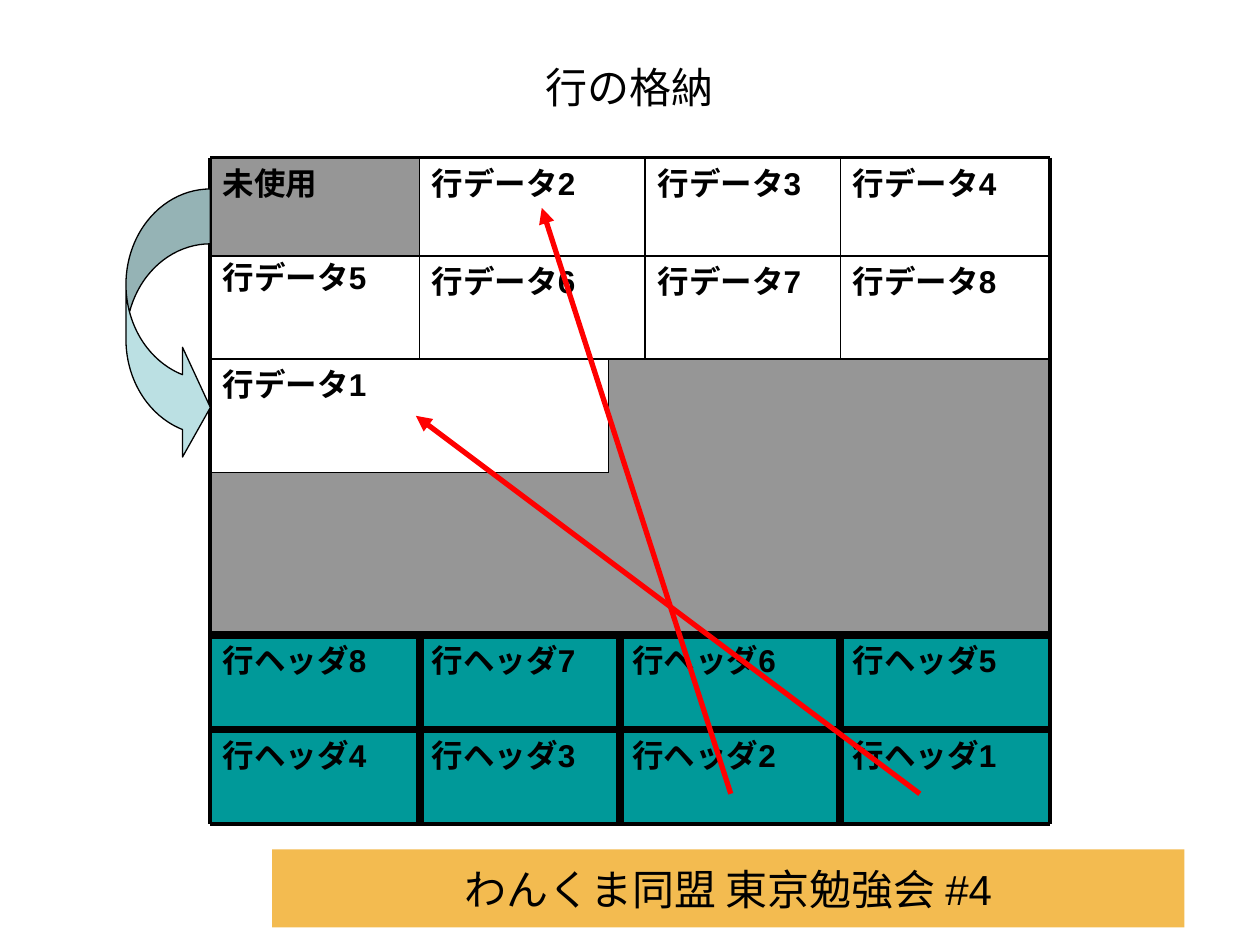
from dataclasses import dataclass

from lxml import etree
from pptx import Presentation
from pptx import util as u
from pptx.dml.color import RGBColor
from pptx.enum import shapes, text
from pptx.oxml.ns import qn

WIDE, HIGH = 10, 7.5
FONT = "Arial"
HUES = {
    "ink": "000000",
    "paper": "FFFFFF",
    "free": "969696",
    "head": "009999",
    "band": "F3BB50",
    "bend": "BBE0E3",
    "link": "FF0000",
}
COLS = {"A": 1.67, "B": 3.33, "C": 4.83, "D": 4.92, "E": 5.12, "F": 6.67, "G": 8.33}
ROWS = [1.25, 2.03, 2.85, 3.75, 5.04, 5.79, 6.54]
DATA = "ABEFG"
HEADS = "ABDFG"
THIN, EDGE, THICK = 1, 2.25, 4.5


@dataclass
class Cell:
    label: str
    left: str
    right: str
    top: int
    end: int
    fill: str | None = None
    lift: float = 0


@dataclass
class Rule:
    start: tuple[str, int]
    stop: tuple[str, int]
    weight: float


@dataclass
class Link:
    start: tuple[float, float]
    stop: tuple[float, float]


def tint(name: str) -> RGBColor:
    return RGBColor.from_string(HUES[name])


def write(frame, label: str, size: int, align, anchor, bold: bool = False) -> None:
    frame.text = label
    frame.word_wrap = True
    frame.vertical_anchor = anchor
    line = frame.paragraphs[0]
    line.alignment = align
    for run in line.runs:
        run.font.name = FONT
        run.font.size = u.Pt(size)
        run.font.bold = bold
        run.font.color.rgb = tint("ink")


def block(slide, kind, box: tuple, fill: str, line: str | None = None):
    shape = slide.shapes.add_shape(kind, *map(u.Inches, box))
    shape.shadow.inherit = False
    shape.fill.solid()
    shape.fill.fore_color.rgb = tint(fill)
    if line:
        shape.line.color.rgb = tint(line)
        shape.line.width = u.Pt(0.75)
    else:
        shape.line.fill.background()
    return shape


def draw_cell(slide, cell: Cell) -> None:
    left, top = COLS[cell.left], ROWS[cell.top] - cell.lift
    box = (left, top, COLS[cell.right] - left, ROWS[cell.end] - ROWS[cell.top])
    if cell.fill:
        shape = block(slide, shapes.MSO_SHAPE.RECTANGLE, box, cell.fill)
    else:
        shape = slide.shapes.add_textbox(*map(u.Inches, box))
    if cell.label:
        write(shape.text_frame, cell.label, 18, text.PP_ALIGN.LEFT,
              text.MSO_ANCHOR.TOP, True)


def draw_line(slide, start: tuple, stop: tuple, hue: str, weight: float):
    line = slide.shapes.add_connector(
        shapes.MSO_CONNECTOR.STRAIGHT, *map(u.Inches, (*start, *stop)))
    line.line.color.rgb = tint(hue)
    line.line.width = u.Pt(weight)
    etree.SubElement(line._element.spPr, qn("a:effectLst"))
    return line


def draw_rule(slide, rule: Rule) -> None:
    ends = [(COLS[col], ROWS[row]) for col, row in (rule.start, rule.stop)]
    draw_line(slide, *ends, "ink", rule.weight)


def draw_link(slide, link: Link) -> None:
    ends = [(x * WIDE, y * HIGH) for x, y in (link.start, link.stop)]
    line = draw_line(slide, *ends, "link", 3)
    etree.SubElement(line.line._get_or_add_ln(), qn("a:tailEnd"), type="triangle")


def list_cells() -> list[Cell]:
    cells = [Cell("", "A", "G", 2, 4, "free")]
    for i in range(4):
        for row in range(2):
            num = row * 4 + i + 1
            first = num == 1
            cells.append(Cell("未使用" if first else f"行データ{num}",
                              DATA[i], DATA[i + 1], row, row + 1,
                              "free" if first else None,
                              0.03 if num == 5 else 0))
            cells.append(Cell(f"行ヘッダ{8 - row * 4 - i}",
                              HEADS[i], HEADS[i + 1], row + 4, row + 5, "head"))
    return cells


def list_rules() -> list[Rule]:
    flat = {0: EDGE, 1: THIN, 2: THIN, 6: EDGE, 4: THICK, 5: THICK}
    rules = [Rule(("A", row), ("G", row), size) for row, size in flat.items()]
    rules += [Rule((col, 0), (col, 6), EDGE) for col in "AG"]
    rules += [Rule((col, 0), (col, 2), THIN) for col in DATA[1:-1]]
    rules += [Rule((col, 4), (col, 6), THICK) for col in HEADS[1:-1]]
    return rules


def main() -> None:
    deck = Presentation()
    deck.slide_width, deck.slide_height = u.Inches(WIDE), u.Inches(HIGH)
    slide = deck.slides.add_slide(deck.slide_layouts[5])
    mid = (text.PP_ALIGN.CENTER, text.MSO_ANCHOR.MIDDLE)

    title = slide.shapes.title
    title.left, title.top = u.Inches(WIDE * 0.05), u.Inches(HIGH * 0.04)
    title.width, title.height = u.Inches(WIDE * 0.9), u.Inches(0.77)
    write(title.text_frame, "行の格納", 24, *mid)

    band = block(slide, shapes.MSO_SHAPE.RECTANGLE, (2.16, 6.74, 7.24, 0.62), "band")
    write(band.text_frame, "わんくま同盟 東京勉強会 #4", 24, *mid)

    for cell in list_cells():
        draw_cell(slide, cell)
    for rule in list_rules():
        draw_rule(slide, rule)

    draw_cell(slide, Cell("行データ1", "A", "C", 2, 3, "paper"))
    draw_rule(slide, Rule(("A", 2), ("C", 2), THIN))
    draw_rule(slide, Rule(("A", 2), ("A", 3), EDGE))
    draw_rule(slide, Rule(("A", 3), ("C", 3), THIN))
    draw_rule(slide, Rule(("C", 2), ("C", 3), THIN))

    bend = block(slide, shapes.MSO_SHAPE.CURVED_RIGHT_ARROW,
                 (WIDE * 0.1, HIGH * 0.2, 0.67, 2.17), "bend", "ink")
    for i, share in enumerate((0.65, 1.3, 0.33)):
        bend.adjustments[i] = share

    for link in (Link((0.73, 0.84), (0.33, 0.44)), Link((0.58, 0.84), (0.43, 0.22))):
        draw_link(slide, link)
    deck.save("out.pptx")


if __name__ == "__main__":
    main()
